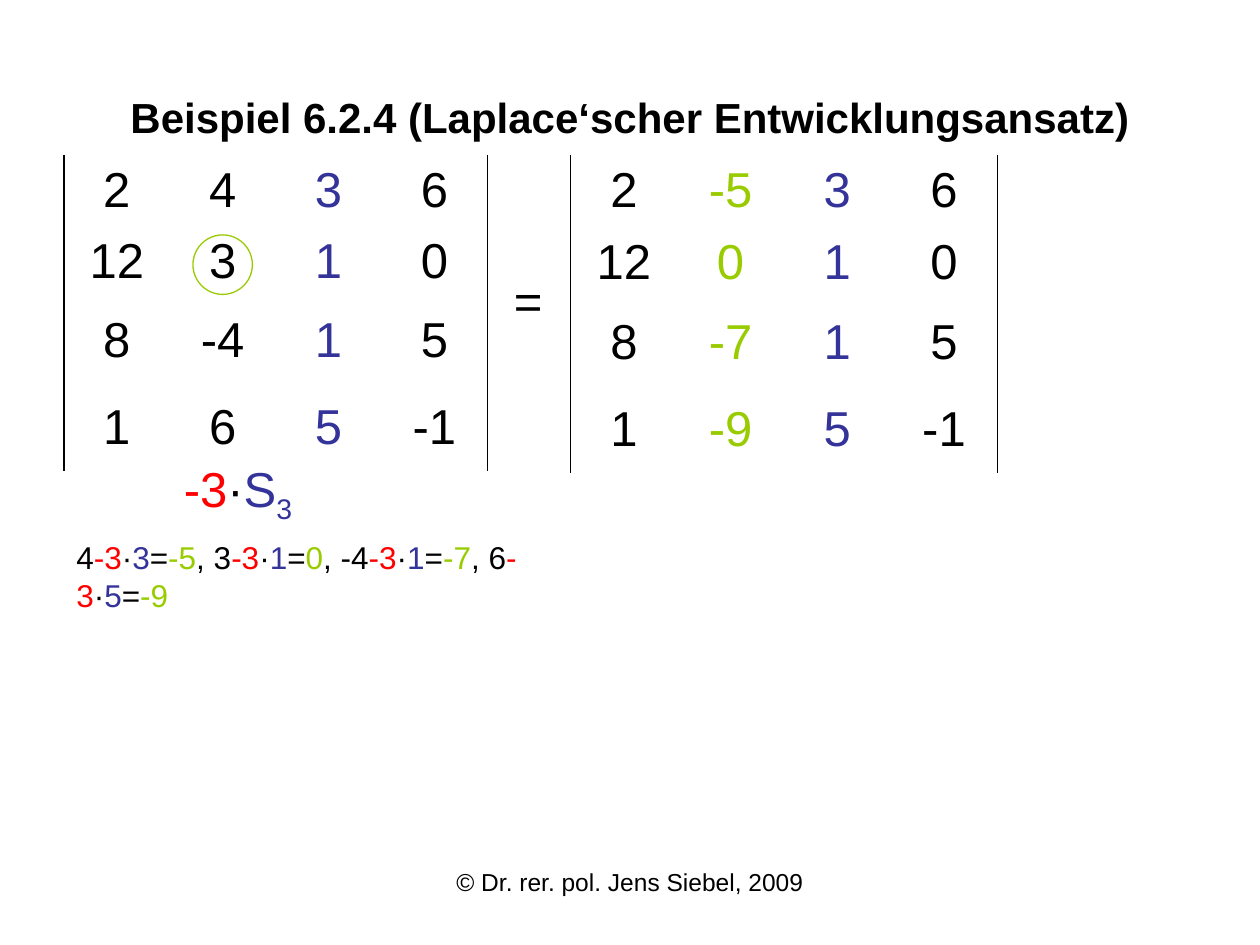
from lxml.etree import SubElement
from pptx import Presentation
from pptx.dml.color import RGBColor
from pptx.enum.shapes import MSO_SHAPE
from pptx.enum.text import MSO_ANCHOR, MSO_AUTO_SIZE, PP_ALIGN
from pptx.oxml.ns import qn
from pptx.util import Pt

THEME = {
    "font": "Arial",
    "colors": {"text": "000000", "factor": "FF0000", "source": "333399", "result": "99CC00"},
    "sizes": {"title": 24, "matrix": 28, "steps": 18, "footer": 14},
}

TITLE = "Beispiel 6.2.4 (Laplace‘scher Entwicklungsansatz)"
FOOTER = "© Dr. rer. pol. Jens Siebel, 2009"
FACTOR = "-3"
CHANGED, SOURCE = 1, 2  # column indices
BEFORE = [(2, 4, 3, 6), (12, 3, 1, 0), (8, -4, 1, 5), (1, 6, 5, -1)]
AFTER = [(2, -5, 3, 6), (12, 0, 1, 0), (8, -7, 1, 5), (1, -9, 5, -1)]

MATRICES = [
    {"rows": BEFORE, "left": 36.5, "column": 60.5, "heights": (40.5, 40.5, 50, 50),
     "roles": {SOURCE: "source"}},
    {"rows": AFTER, "left": 326, "column": 61, "heights": (41, 41, 50, 50),
     "roles": {SOURCE: "source", CHANGED: "result"}},
]
MATRIX_TOP = 88.5
PIVOT_DIAMETER = 34
PIVOT_DROP = 2


def column_steps():
    """Spell out each changed entry: old entry, factor times source, result."""
    runs = []
    for old, new in zip(BEFORE, AFTER):
        separator = ", " if runs else ""
        runs += [(f"{separator}{old[CHANGED]}", "text"), (FACTOR, "factor"), ("·", "text"),
                 (str(old[SOURCE]), "source"), ("=", "text"), (str(new[CHANGED]), "result")]
    return runs


def color(role):
    return RGBColor.from_string(THEME["colors"][role])


def write(paragraph, runs, size, align=PP_ALIGN.LEFT, bold=False):
    paragraph.alignment = align
    for words, role in runs:
        run = paragraph.add_run()
        run.text = words
        font_format = {"name": THEME["font"], "size": Pt(THEME["sizes"][size]), "bold": bold}
        for attribute, value in font_format.items():
            setattr(run.font, attribute, value)
        run.font.color.rgb = color(role)


def add_label(slide, box, runs, size, align=PP_ALIGN.LEFT):
    frame = slide.shapes.add_textbox(*map(Pt, box)).text_frame
    frame.word_wrap = True
    frame.auto_size = MSO_AUTO_SIZE.SHAPE_TO_FIT_TEXT
    write(frame.paragraphs[0], runs, size, align)
    return frame.paragraphs[0]


def set_borders(cell, visible):
    """Draw the visible sides (L, R, T, B) and hide the others."""
    properties = cell._tc.get_or_add_tcPr()
    for side in "LRTB":
        line = SubElement(properties, qn(f"a:ln{side}"), w=str(Pt(1)))
        if side in visible:
            fill = SubElement(line, qn("a:solidFill"))
            SubElement(fill, qn("a:srgbClr"), val=THEME["colors"]["text"])
        else:
            SubElement(line, qn("a:noFill"))


def add_determinant(slide, matrix):
    rows, heights, width = matrix["rows"], matrix["heights"], matrix["column"]
    count = len(rows[0])
    table = slide.shapes.add_table(
        len(rows), count, Pt(matrix["left"]), Pt(MATRIX_TOP),
        Pt(width * count), Pt(sum(heights))).table
    table.first_row = table.horz_banding = False
    for column in table.columns:
        column.width = Pt(width)
    for r, entries in enumerate(rows):
        table.rows[r].height = Pt(heights[r])
        for c, entry in enumerate(entries):
            cell = table.cell(r, c)
            cell.vertical_anchor = MSO_ANCHOR.MIDDLE
            set_borders(cell, {0: "L", count - 1: "R"}.get(c, ""))
            cell.fill.background()
            role = matrix["roles"].get(c, "text")
            write(cell.text_frame.paragraphs[0], [(str(entry), role)], "matrix", PP_ALIGN.CENTER)


def add_pivot_ring(slide, matrix, row, column):
    heights = matrix["heights"]
    center_x = matrix["left"] + matrix["column"] * (column + 0.5)
    center_y = MATRIX_TOP + sum(heights[:row]) + heights[row] / 2 + PIVOT_DROP
    radius = PIVOT_DIAMETER / 2
    ring = slide.shapes.add_shape(
        MSO_SHAPE.OVAL, Pt(center_x - radius), Pt(center_y - radius),
        Pt(PIVOT_DIAMETER), Pt(PIVOT_DIAMETER))
    ring.shadow.inherit = False
    ring.fill.background()
    ring.line.color.rgb = color("result")
    ring.line.width = Pt(0.75)


def main():
    deck = Presentation()
    deck.slide_width, deck.slide_height = Pt(720), Pt(540)
    slide = deck.slides.add_slide(deck.slide_layouts[5])

    title = slide.shapes.title
    title_box = {"left": 36, "top": 21.6, "width": 648, "height": 90}
    for attribute, value in title_box.items():
        setattr(title, attribute, Pt(value))
    title.text_frame.vertical_anchor = MSO_ANCHOR.MIDDLE
    write(title.text_frame.paragraphs[0], [(TITLE, "text")], "title", PP_ALIGN.CENTER, bold=True)

    for matrix in MATRICES:
        add_determinant(slide, matrix)
    add_pivot_ring(slide, MATRICES[0], 1, CHANGED)

    operation = add_label(
        slide, (82, 258.5, 108, 41),
        [(FACTOR, "factor"), ("·", "text"), ("S", "source"), (str(SOURCE + 1), "source")],
        "matrix", PP_ALIGN.CENTER)
    operation.runs[-1].font._element.set("baseline", "-25000")
    add_label(slide, (286.5, 151, 39.5, 41), [("=", "text")], "matrix")
    add_label(slide, (36.5, 304, 317.5, 29), column_steps(), "steps")
    add_label(slide, (246, 492, 228, 37.5), [(FOOTER, "text")], "footer", PP_ALIGN.CENTER)

    deck.save("out.pptx")


if __name__ == "__main__":
    main()
